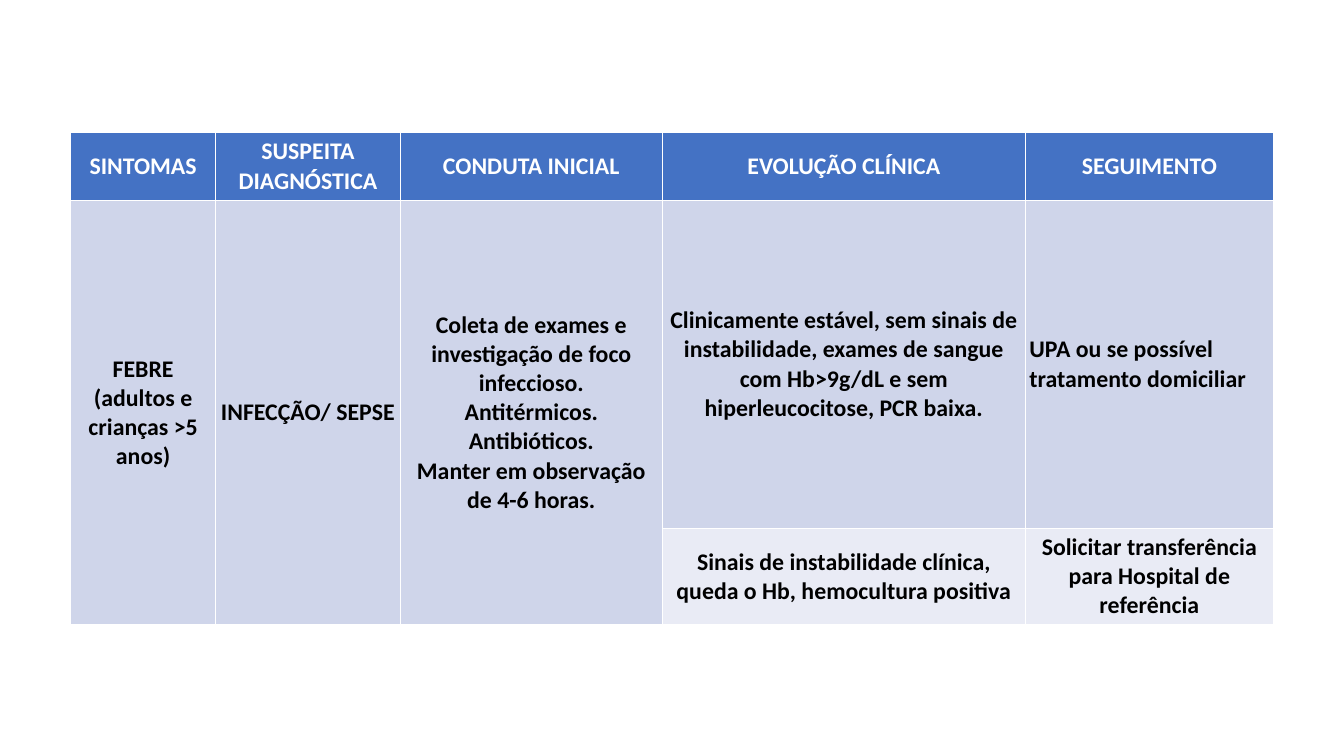
from pptx import Presentation
from pptx.dml.color import RGBColor
from pptx.enum.text import MSO_ANCHOR, PP_ALIGN
from pptx.util import Inches, Pt

HEADER_BLUE = RGBColor(0x44, 0x72, 0xC4)
BAND_DARK = RGBColor(0xCF, 0xD5, 0xEA)
BAND_LIGHT = RGBColor(0xE9, 0xEB, 0xF5)
WHITE = RGBColor(0xFF, 0xFF, 0xFF)
BLACK = RGBColor(0x00, 0x00, 0x00)

ROW_FILLS = (HEADER_BLUE, BAND_DARK, BAND_LIGHT)
ROW_COLORS = (WHITE, BLACK, BLACK)
COLUMN_WIDTHS = (1.44, 1.83, 2.6, 3.6, 2.46)
ROW_HEIGHTS = (0.68, 3.25, 0.96)
MERGED_COLUMNS = 3
CELL_MARGIN = Inches(0.04)

CARE_ROWS = (
    ("SINTOMAS", "SUSPEITA DIAGNÓSTICA", "CONDUTA INICIAL",
     "EVOLUÇÃO CLÍNICA", "SEGUIMENTO"),
    ("FEBRE\n(adultos e crianças >5 anos)",
     "INFECÇÃO/ SEPSE",
     "Coleta de exames e investigação de foco infeccioso.\nAntitérmicos.\n"
     "Antibióticos.\nManter em observação de 4-6 horas.",
     "Clinicamente estável, sem sinais de instabilidade, exames de sangue "
     "com Hb>9g/dL e sem hiperleucocitose, PCR baixa.",
     "UPA ou se possível tratamento domiciliar"),
    ("", "", "",
     "Sinais de instabilidade clínica, queda o Hb, hemocultura positiva",
     "Solicitar transferência para Hospital de referência"),
)
LEFT_ALIGNED_CELL = (1, 4)


def format_cell(cell, text, fill, color, alignment):
    cell.fill.solid()
    cell.fill.fore_color.rgb = fill
    cell.vertical_anchor = MSO_ANCHOR.MIDDLE
    cell.margin_left = cell.margin_right = CELL_MARGIN
    cell.margin_top = cell.margin_bottom = CELL_MARGIN
    cell.text_frame.text = text
    for para in cell.text_frame.paragraphs:
        para.alignment = alignment
        for span in para.runs:
            span.font.name = "Calibri"
            span.font.size = Pt(17)
            span.font.bold = True
            span.font.color.rgb = color


def add_care_table(page, left, top):
    frame = page.shapes.add_table(
        len(ROW_HEIGHTS), len(COLUMN_WIDTHS), Inches(left), Inches(top),
        Inches(sum(COLUMN_WIDTHS)), Inches(sum(ROW_HEIGHTS)))
    table = frame.table
    for column, width in zip(table.columns, COLUMN_WIDTHS):
        column.width = Inches(width)
    for row, height in zip(table.rows, ROW_HEIGHTS):
        row.height = Inches(height)
    for row_index, texts in enumerate(CARE_ROWS):
        for column_index, text in enumerate(texts):
            position = (row_index, column_index)
            alignment = PP_ALIGN.LEFT if position == LEFT_ALIGNED_CELL else PP_ALIGN.CENTER
            format_cell(table.cell(*position), text, ROW_FILLS[row_index],
                        ROW_COLORS[row_index], alignment)
    for column_index in range(MERGED_COLUMNS):
        table.cell(1, column_index).merge(table.cell(2, column_index))


def main():
    deck = Presentation()
    deck.slide_width = Inches(13.33)
    deck.slide_height = Inches(7.5)
    page = deck.slides.add_slide(deck.slide_layouts[6])
    add_care_table(page, 0.7, 1.31)
    deck.save("out.pptx")


if __name__ == "__main__":
    main()
